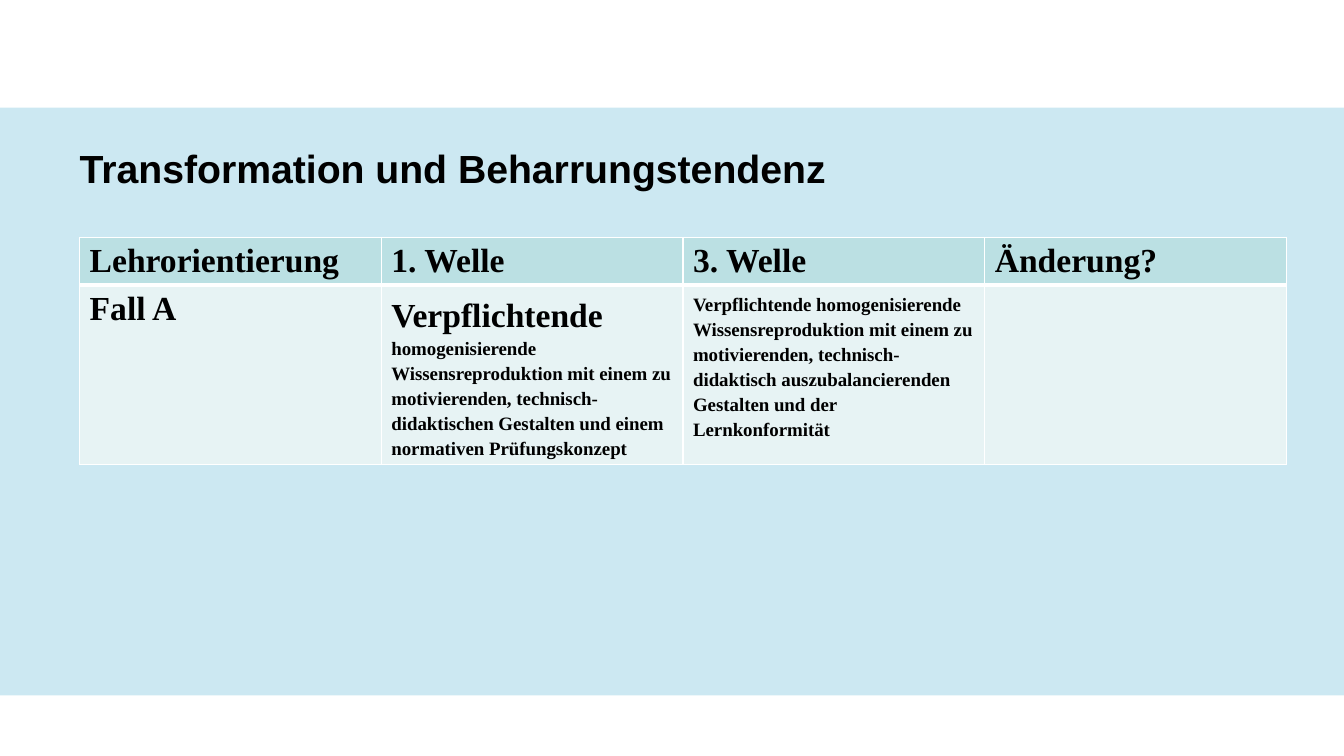
from typing import NamedTuple

from lxml.etree import SubElement
from pptx import Presentation
from pptx.dml.color import RGBColor
from pptx.enum.shapes import MSO_SHAPE
from pptx.enum.text import MSO_ANCHOR, MSO_AUTO_SIZE, PP_ALIGN
from pptx.oxml.ns import qn
from pptx.util import Pt

COLORS = {
    "band": "008FBE",
    "header": "BBE0E3",
    "body": "E7F3F4",
    "border": "FFFFFF",
    "text": "000000",
}
SERIF = "Times New Roman"
LEFT, WIDTH = 56.9, 862


class Run(NamedTuple):
    text: str
    size: float = 24
    font: str = SERIF


class Cell(NamedTuple):
    runs: tuple[Run, ...] = ()
    spacing: float = 1.0


ROWS = [
    [Cell((Run(text),)) for text in ("Lehrorientierung", "1. Welle", "3. Welle", "Änderung?")],
    [
        Cell((Run("Fall A"),)),
        Cell((
            Run("Verpflichtende "),
            Run("homogenisierende Wissensreproduktion mit einem zu motivierenden, "
                "technisch-didaktischen Gestalten und einem normativen Prüfungskonzept", 13.5),
        ), 1.2),
        Cell((
            Run("Verpflichtende homogenisierende Wissensreproduktion mit einem zu motivierenden, "
                "technisch-didaktisch auszubalancierenden Gestalten und der Lernkonformität", 13.5),
        ), 1.2),
        Cell(),
    ],
]


def rgb(name: str) -> RGBColor:
    return RGBColor.from_string(COLORS[name])


def write(tf, runs: tuple[Run, ...], spacing: float) -> None:
    p = tf.paragraphs[0]
    for name, value in {"alignment": PP_ALIGN.LEFT, "line_spacing": spacing,
                        "space_before": Pt(0)}.items():
        setattr(p, name, value)
    for run in runs:
        r = p.add_run()
        r.text = run.text
        for name, value in {"size": Pt(run.size), "name": run.font, "bold": True}.items():
            setattr(r.font, name, value)
        r.font.color.rgb = rgb("text")


def add_borders(cell, bottom: float) -> None:
    tc_pr = cell._tc.get_or_add_tcPr()
    for side, width in {"L": 1, "R": 1, "T": 1, "B": bottom}.items():
        ln = SubElement(tc_pr, qn(f"a:ln{side}"), w=str(Pt(width)))
        fill = SubElement(ln, qn("a:solidFill"))
        SubElement(fill, qn("a:srgbClr"), val=COLORS["border"])


def add_title(s) -> None:
    title = s.shapes.title
    for name, value in {"left": LEFT, "top": 99.4, "width": WIDTH, "height": 56.9}.items():
        setattr(title, name, Pt(value))
    tf = title.text_frame
    for name, value in {"margin_left": 0, "margin_top": 0, "margin_right": 0, "margin_bottom": 0,
                        "vertical_anchor": MSO_ANCHOR.TOP, "word_wrap": True,
                        "auto_size": MSO_AUTO_SIZE.NONE}.items():
        setattr(tf, name, value)
    write(tf, (Run("Transformation und Beharrungstendenz", 28, "Arial"),), 1.1)


def add_band(s) -> None:
    band = s.shapes.add_shape(MSO_SHAPE.RECTANGLE, 0, Pt(77), Pt(960), Pt(419.8))
    band.shadow.inherit = False
    band.line.fill.background()
    band.fill.solid()
    band.fill.fore_color.rgb = rgb("band")
    color = band.element.find(".//" + qn("a:srgbClr"))
    SubElement(color, qn("a:alpha"), val="20000")
    s.shapes.title.element.addprevious(band.element)


def add_waves_table(s) -> None:
    frame = s.shapes.add_table(len(ROWS), len(ROWS[0]), Pt(LEFT), Pt(169.9), Pt(WIDTH), Pt(59))
    for i, row in enumerate(ROWS):
        for j, content in enumerate(row):
            cell = frame.table.cell(i, j)
            add_borders(cell, 1 if i else 3)
            cell.fill.solid()
            cell.fill.fore_color.rgb = rgb("body" if i else "header")
            write(cell.text_frame, content.runs, content.spacing)
    frame.height = Pt(192.2)


def main() -> None:
    prs = Presentation()
    prs.slide_width, prs.slide_height = Pt(960), Pt(540)
    s = prs.slides.add_slide(prs.slide_layouts[5])
    add_title(s)
    add_band(s)
    add_waves_table(s)
    prs.save("out.pptx")


if __name__ == "__main__":
    main()
